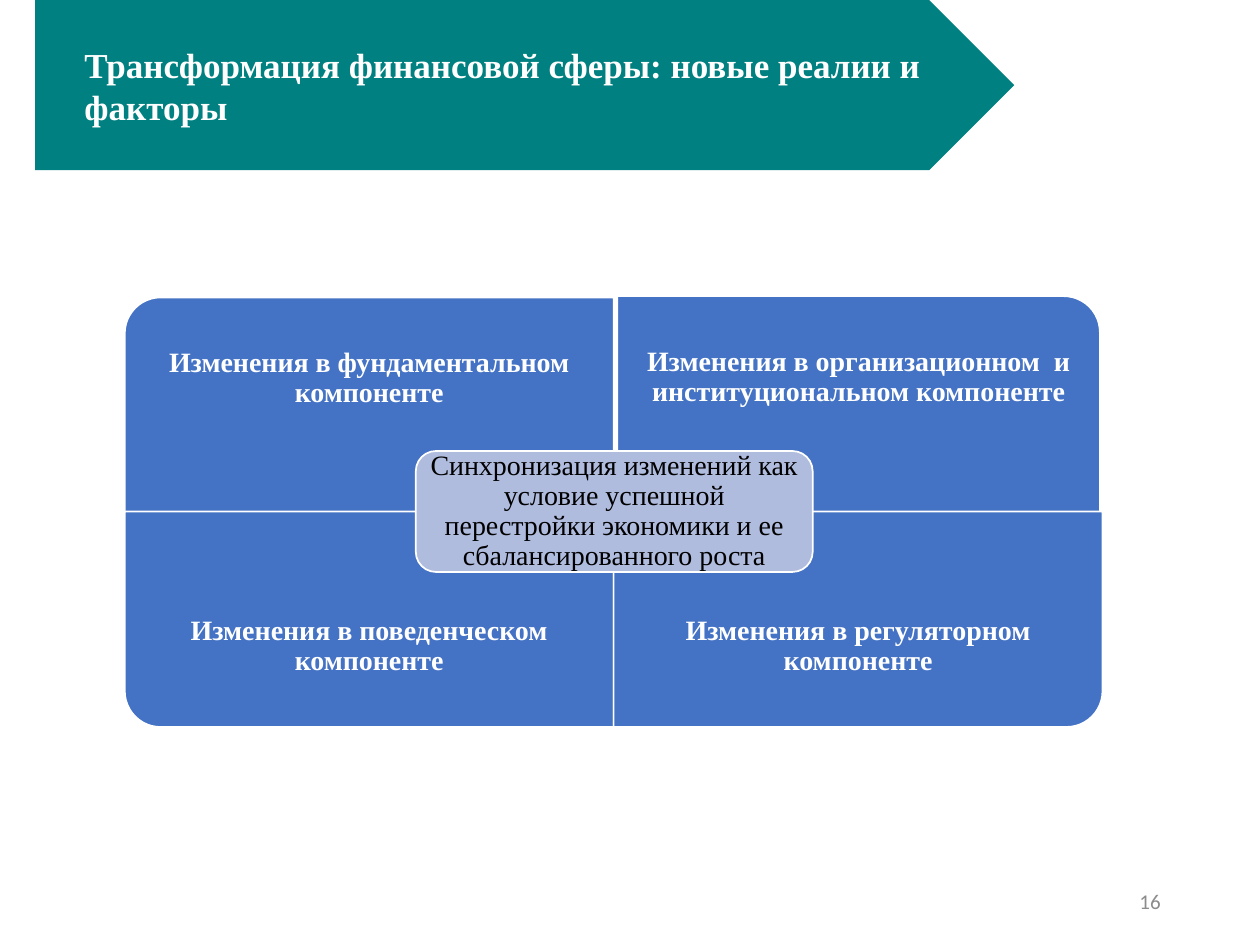
from pptx import Presentation
from pptx.dml.color import RGBColor
from pptx.enum.shapes import MSO_SHAPE as Shape
from pptx.enum.text import MSO_ANCHOR as Anchor, PP_ALIGN as Align
from pptx.util import Inches, Pt

TITLE = "Трансформация финансовой сферы: новые реалии и факторы"
# text, left, top, width, height, rotation that turns the round corner outward
QUADRANTS = [
    ("Изменения в фундаментальном компоненте", 0.99, 2.36, 3.88, 1.71, 270),
    ("Изменения в организационном  и институциональном компоненте",
     4.9, 2.35, 3.83, 1.72, 0),
    ("Изменения в поведенческом компоненте", 0.99, 4.06, 3.88, 1.71, 180),
    ("Изменения в регуляторном компоненте", 4.87, 4.06, 3.88, 1.71, 90),
]
CENTER = ("Синхронизация изменений как условие успешной перестройки "
          "экономики и ее сбалансированного роста")
PAGE = "16"
LABEL_SHARE = 0.75  # part of a quadrant's height given to its label

THEME = {
    "serif": "Times New Roman", "sans": "Calibri",
    "teal": "008080", "blue": "4472C4", "pale": "B0BCDE",
    "white": "FFFFFF", "black": "000000", "grey": "8C8C8C",
    "title": 20, "body": 16, "page": 12,
}


def color(name):
    return RGBColor.from_string(THEME[name])


def add_shape(kind, box, fill, line=None, rotation=0):
    s = slide.shapes.add_shape(kind, *map(Inches, box))
    s.shadow.inherit = False
    s.rotation = rotation
    s.fill.solid()
    s.fill.fore_color.rgb = color(fill)
    if line:
        s.line.color.rgb = color(line)
        s.line.width = Pt(1)
    else:
        s.line.fill.background()
    return s


def set_text(s, text, size, ink, font="serif", bold=False,
             align=Align.CENTER, inset=0.1, spacing=0.9):
    tf = s.text_frame
    tf.word_wrap = True
    tf.vertical_anchor = Anchor.MIDDLE
    tf.margin_left = tf.margin_right = Inches(inset)
    tf.margin_top = tf.margin_bottom = Inches(inset)
    p = tf.paragraphs[0]
    p.text = text
    p.alignment = align
    p.line_spacing = spacing
    p.font.name = THEME[font]
    p.font.size = Pt(THEME[size])
    p.font.bold = bold
    p.font.color.rgb = color(ink)


def add_label(box, *args, **kwargs):
    set_text(slide.shapes.add_textbox(*map(Inches, box)), *args, **kwargs)


def add_quadrant(text, left, top, width, height, rotation):
    w, h = (height, width) if rotation % 180 else (width, height)
    box = (left + (width - w) / 2, top + (height - h) / 2, w, h)
    add_shape(Shape.ROUND_1_RECTANGLE, box, "blue", "white", rotation)
    label_h = height * LABEL_SHARE
    is_bottom = rotation in (90, 180)
    label_top = top + height - label_h if is_bottom else top
    add_label((left, label_top, width, label_h), text, "body", "white",
              bold=True, inset=0.12)


prs = Presentation()
prs.slide_width, prs.slide_height = Inches(10), Inches(7.5)
slide = prs.slides.add_slide(prs.slide_layouts[5])

banner = add_shape(Shape.PENTAGON, (0.28, 0, 7.77, 1.35), "teal")
title = slide.shapes.title
title.left, title.top, title.width, title.height = map(
    Inches, (0.57, 0, 7.14, 1.35))
set_text(title, TITLE, "title", "white", bold=True, align=Align.LEFT, spacing=1)
banner.element.addnext(title.element)  # the title lies on the banner

for quadrant in QUADRANTS:
    add_quadrant(*quadrant)

center = add_shape(Shape.ROUNDED_RECTANGLE, (3.3, 3.58, 3.15, 0.96), "pale", "white")
set_text(center, CENTER, "body", "black", inset=0.07)

add_label((7.06, 6.95, 2.25, 0.4), PAGE, "page", "grey", font="sans",
          align=Align.RIGHT, spacing=1)

prs.save("out.pptx")
